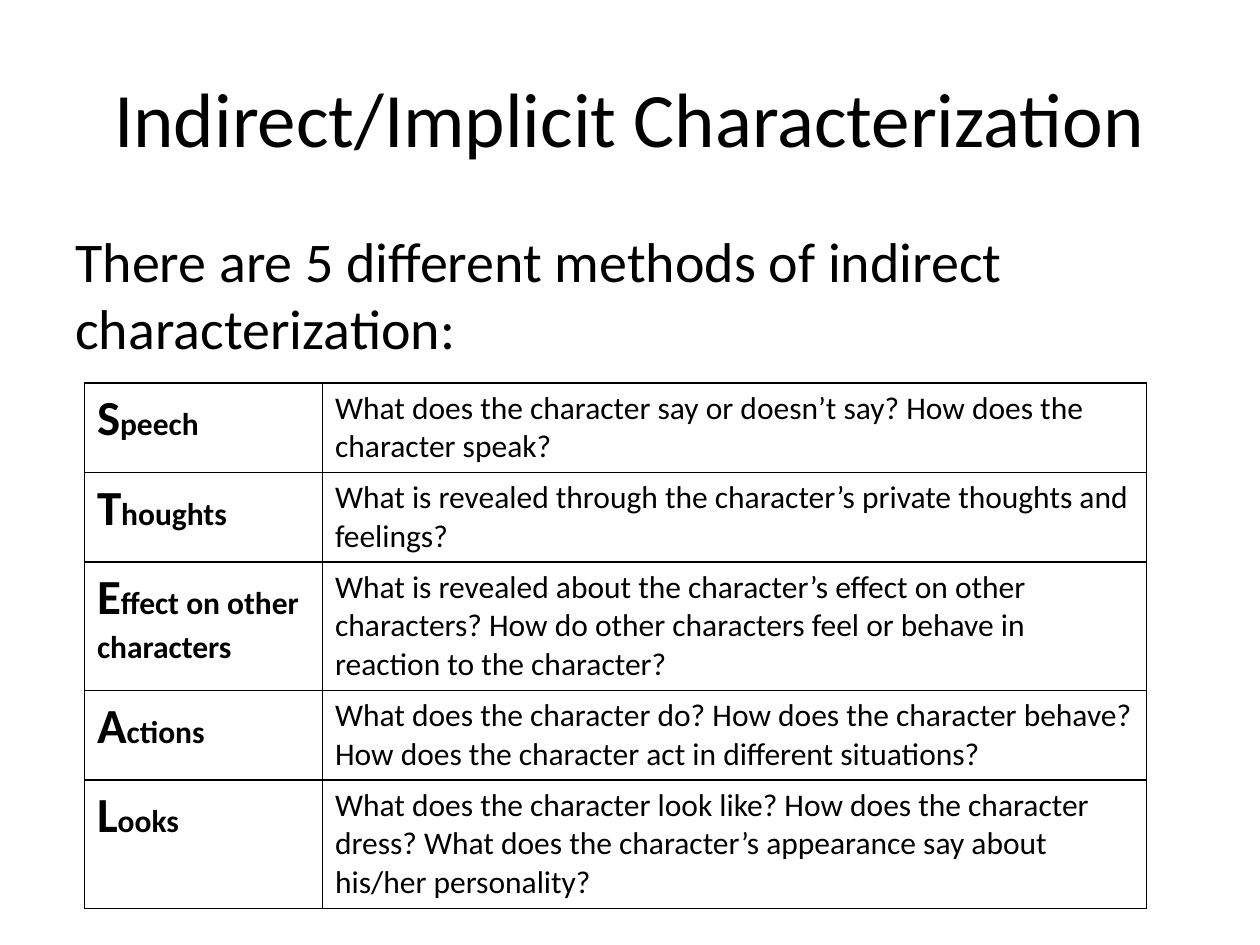
from lxml import etree
from pptx import Presentation
from pptx.dml.color import RGBColor
from pptx.enum import text
from pptx.oxml import ns
from pptx.util import Inches, Pt

theme = {
    "font": "Calibri",
    "ink": RGBColor(0, 0, 0),
    "paper": RGBColor(255, 255, 255),
    "title": 44,
    "lead": 32,
    "cap": 28,
    "cell": 18,
}


def style(run, size, bold=False):
    font = run.font
    font.name = theme["font"]
    font.size = Pt(theme[size])
    font.bold = bold
    font.color.rgb = theme["ink"]


def border(cell):
    props = cell._tc.get_or_add_tcPr()
    for place, side in enumerate(("lnL", "lnR", "lnT", "lnB")):
        line = etree.Element(ns.qn("a:" + side), w=str(Pt(1)))
        fill = etree.SubElement(line, ns.qn("a:solidFill"))
        etree.SubElement(fill, ns.qn("a:srgbClr"), val=str(theme["ink"]))
        props.insert(place, line)


deck = Presentation()
deck.slide_width = Inches(10)
deck.slide_height = Inches(7.5)
slide = deck.slides.add_slide(deck.slide_layouts[6])
slide.background.fill.solid()
slide.background.fill.fore_color.rgb = theme["paper"]

heads = [
    ("Indirect/Implicit Characterization", "title", 0.3, 1.25,
     text.PP_ALIGN.CENTER, text.MSO_ANCHOR.MIDDLE),
    ("There are 5 different methods of indirect characterization:", "lead", 1.75, 1.25,
     text.PP_ALIGN.LEFT, text.MSO_ANCHOR.TOP),
]
for words, size, top, height, align, anchor in heads:
    box = slide.shapes.add_textbox(Inches(0.5), Inches(top), Inches(9), Inches(height))
    frame = box.text_frame
    frame.word_wrap = True
    frame.vertical_anchor = anchor
    frame.text = words
    frame.paragraphs[0].alignment = align
    style(frame.paragraphs[0].runs[0], size)

traits = [
    ("Speech", 0.71,
     "What does the character say or doesn’t say? How does the character speak?"),
    ("Thoughts", 0.71,
     "What is revealed through the character’s private thoughts and feelings?"),
    ("Effect on other characters", 1.02,
     "What is revealed about the character’s effect on other characters? "
     "How do other characters feel or behave in reaction to the character?"),
    ("Actions", 0.71,
     "What does the character do? How does the character behave? "
     "How does the character act in different situations?"),
    ("Looks", 1.02,
     "What does the character look like? How does the character dress? "
     "What does the character’s appearance say about his/her personality?"),
]
table = slide.shapes.add_table(
    len(traits), 2, Inches(0.67), Inches(3.04), Inches(8.43), Inches(4.17)).table
table.first_row = False
table.horz_banding = False
for col, width in zip(table.columns, (1.89, 6.54)):
    col.width = Inches(width)

for row, (name, height, asks) in zip(table.rows, traits):
    row.height = Inches(height)
    label, detail = row.cells
    label.text_frame.text = name[0]
    para = label.text_frame.paragraphs[0]
    para.add_run().text = name[1:]
    for run, size in zip(para.runs, ("cap", "cell")):
        style(run, size, True)
    detail.text_frame.text = asks
    style(detail.text_frame.paragraphs[0].runs[0], "cell")
    for cell in row.cells:
        cell.fill.background()
        border(cell)

deck.save("out.pptx")
